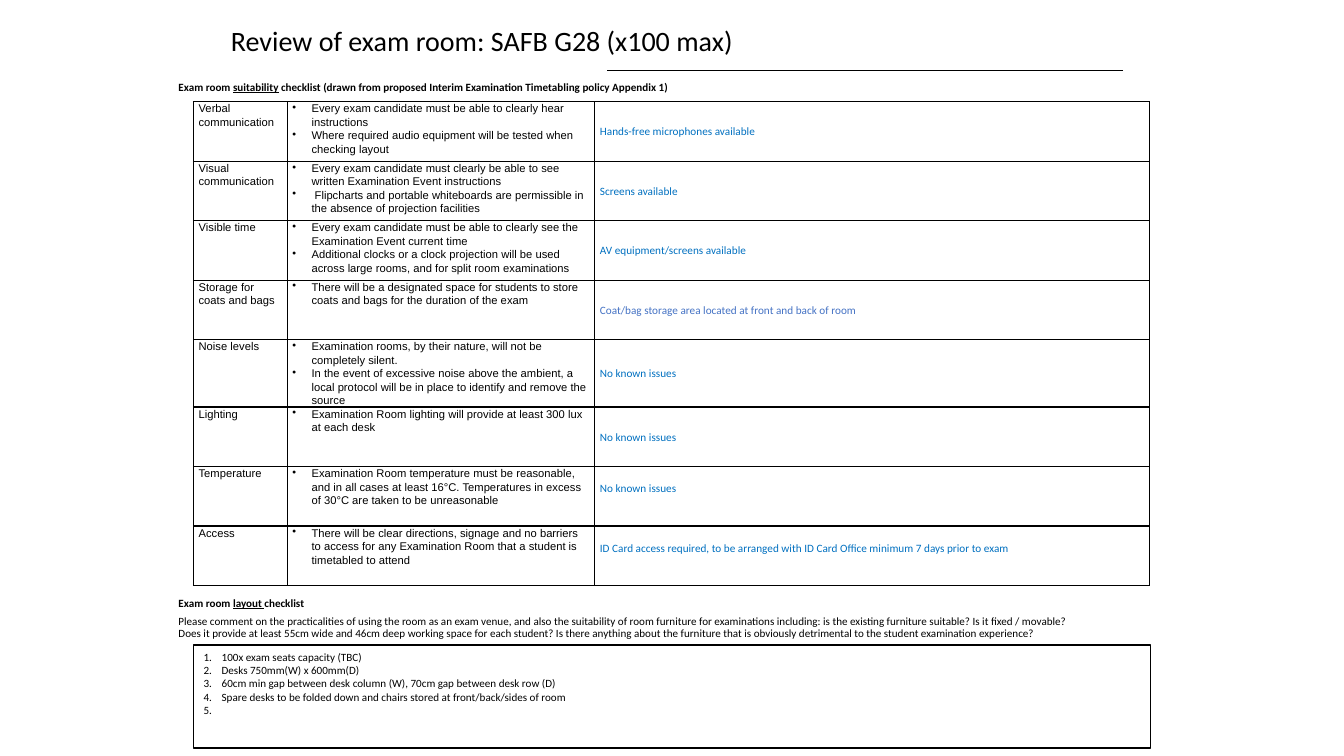
from lxml import etree
from pptx import Presentation
from pptx.dml.color import RGBColor
from pptx.enum.shapes import MSO_CONNECTOR, MSO_SHAPE
from pptx.enum.text import MSO_ANCHOR, MSO_AUTO_SIZE, PP_ALIGN
from pptx.oxml.ns import qn
from pptx.util import Inches, Pt

TOP, MIDDLE = MSO_ANCHOR.TOP, MSO_ANCHOR.MIDDLE
LEFT = PP_ALIGN.LEFT
NO_FIT = MSO_AUTO_SIZE.NONE
RECT, STRAIGHT = MSO_SHAPE.RECTANGLE, MSO_CONNECTOR.STRAIGHT

COLORS = {"black": "000000", "white": "FFFFFF", "blue": "0070C0", "accent": "4472C4"}

# Each row: topic, requirements, comment, comment colour, bottom margin of comment
CHECKLIST = [
    ("Verbal communication",
     ["Every exam candidate must be able to clearly hear instructions",
      "Where required audio equipment will be tested when checking layout"],
     "Hands-free microphones available", "blue", 0),
    ("Visual communication",
     ["Every exam candidate must clearly be able to see written Examination Event instructions",
      " Flipcharts and portable whiteboards are permissible in the absence of projection facilities"],
     "Screens available", "blue", 0),
    ("Visible time",
     ["Every exam candidate must be able to clearly see the Examination Event current time",
      "Additional clocks or a clock projection will be used across large rooms, "
      "and for split room examinations"],
     "AV equipment/screens available", "blue", 0),
    ("Storage for coats and bags",
     ["There will be a designated space for students to store coats and bags "
      "for the duration of the exam"],
     "Coat/bag storage area located at front and back of room", "accent", 0),
    ("Noise levels",
     ["Examination rooms, by their nature, will not be completely silent.",
      "In the event of excessive noise above the ambient, a local protocol will be in place "
      "to identify and remove the source"],
     "No known issues", "blue", 0),
    ("Lighting",
     ["Examination Room lighting will provide at least 300 lux at each desk"],
     "No known issues", "blue", 0),
    ("Temperature",
     ["Examination Room temperature must be reasonable, and in all cases at least 16°C. "
      "Temperatures in excess of 30°C are taken to be unreasonable"],
     "No known issues", "blue", 0.16),
    ("Access",
     ["There will be clear directions, signage and no barriers to access for any Examination Room "
      "that a student is timetabled to attend"],
     "ID Card access required, to be arranged with ID Card Office minimum 7 days prior to exam",
     "blue", 0.16),
]
LAYOUT_ITEMS = [
    "100x exam seats capacity (TBC)",
    "Desks 750mm(W) x 600mm(D)",
    "60cm min gap between desk column (W), 70cm gap between desk row (D)",
    "Spare desks to be folded down and chairs stored at front/back/sides of room",
]
PRACTICALITIES = (
    "Please comment on the practicalities of using the room as an exam venue, and also the "
    "suitability of room furniture for examinations including: is the existing furniture suitable? "
    "Is it fixed / movable? Does it provide at least 55cm wide and 46cm deep working space for each "
    "student? Is there anything about the furniture that is obviously detrimental to the student "
    "examination experience?")


class SlideBuilder:
    def __init__(self, s):
        self.s = s

    def color(self, name):
        return RGBColor.from_string(COLORS[name])

    def style(self, p, size, font="Calibri", color="black", bold=False):
        p.alignment = LEFT
        for r in p.runs:
            r.font.size, r.font.name, r.font.bold = Pt(size), font, bold
            r.font.color.rgb = self.color(color)

    def bullet(self, p, indent, tag, **attrs):
        pPr = p._p.get_or_add_pPr()
        pPr.set("marL", str(Inches(indent)))
        pPr.set("indent", str(Inches(-indent)))
        etree.SubElement(pPr, qn(tag), attrs)

    def place(self, sp, x, y, w, h):
        sp.left, sp.top, sp.width, sp.height = map(Inches, (x, y, w, h))
        tf = sp.text_frame
        tf.word_wrap, tf.auto_size, tf.vertical_anchor = True, NO_FIT, TOP
        return tf

    def title(self, text, box):
        tf = self.place(self.s.shapes.title, *box)
        tf.text = text
        self.style(tf.paragraphs[0], 20)

    def body(self, paragraphs, box):
        """Each paragraph: space before, bold, runs as (text, underlined)."""
        tf = self.place(self.s.placeholders[1], *box)
        for i, (space, bold, runs) in enumerate(paragraphs):
            p = tf.add_paragraph() if i else tf.paragraphs[0]
            self.bullet(p, 0, "a:buNone")
            p.line_spacing, p.space_before = 0.9, Pt(space)
            for text, underlined in runs:
                r = p.add_run()
                r.text, r.font.underline = text, underlined
            self.style(p, 7.9, bold=bold)

    def cell(self, cell, texts, font="Arial", color="black", bulleted=False,
             anchor=TOP, bottom=0):
        cell.margin_left = cell.margin_right = Inches(0.05)
        cell.margin_top, cell.margin_bottom = 0, Inches(bottom)
        cell.vertical_anchor = anchor
        cell.text_frame.text = "\n".join(texts)
        for p in cell.text_frame.paragraphs:
            if bulleted:
                self.bullet(p, 0.19, "a:buChar", char="•")
            p.line_spacing = 1.07
            self.style(p, 8, font, color)
        tcPr = cell._tc.get_or_add_tcPr()
        for side in ("a:lnL", "a:lnR", "a:lnT", "a:lnB"):
            ln = etree.SubElement(tcPr, qn(side), w=str(Pt(1)))
            fill = etree.SubElement(ln, qn("a:solidFill"))
            etree.SubElement(fill, qn("a:srgbClr"), val=COLORS["black"])
        cell.fill.background()

    def table(self, rows, x, y, widths, row_height):
        frame = self.s.shapes.add_table(
            len(rows), len(widths), Inches(x), Inches(y),
            Inches(sum(widths)), Inches(row_height * len(rows)))
        table = frame.table
        table.first_row = table.horz_banding = False
        for column, width in zip(table.columns, widths):
            column.width = Inches(width)
        for row, (topic, needs, comment, color, bottom) in zip(table.rows, rows):
            row.height = Inches(row_height)
            topic_cell, needs_cell, comment_cell = row.cells
            self.cell(topic_cell, [topic])
            self.cell(needs_cell, needs, bulleted=True)
            self.cell(comment_cell, [comment], "Calibri", color, anchor=MIDDLE, bottom=bottom)

    def numbered_box(self, items, box):
        sp = self.s.shapes.add_shape(RECT, *map(Inches, box))
        sp.shadow.inherit = False
        sp.fill.solid()
        sp.fill.fore_color.rgb = self.color("white")
        sp.line.color.rgb, sp.line.width = self.color("black"), Pt(1)
        tf = self.place(sp, *box)
        next_number = f"{len(items) + 1}."
        tf.text = "\n".join(items + [next_number])
        for p in tf.paragraphs:
            if p.text != next_number:
                self.bullet(p, 0.18, "a:buAutoNum", type="arabicPeriod")
            self.style(p, 7.9)

    def line(self, x1, y1, x2, y2):
        c = self.s.shapes.add_connector(STRAIGHT, *map(Inches, (x1, y1, x2, y2)))
        c.line.color.rgb, c.line.width = self.color("black"), Pt(1)
        etree.SubElement(c._element.spPr, qn("a:effectLst"))


def main():
    prs = Presentation()
    prs.slide_width, prs.slide_height = Inches(13.33), Inches(7.5)
    b = SlideBuilder(prs.slides.add_slide(prs.slide_layouts[1]))

    # Headings and guidance
    b.title("Review of exam room: SAFB G28 (x100 max)", (2.19, 0.18, 8.96, 0.77))
    b.body([
        (0, True, [("Exam room ", False), ("suitability", True),
                   (" checklist (drawn from proposed Interim Examination Timetabling policy "
                    "Appendix 1)", False)]),
        (360, True, [("Exam room ", False), ("layout ", True), ("checklist", False)]),
        (4.3, False, [(PRACTICALITIES, False)]),
    ], (1.67, 0.76, 9.06, 5.64))

    # Suitability table
    b.table(CHECKLIST, 1.92, 1.01, (0.93, 3.05, 5.5), 0.59)

    # Layout list and title rule
    b.numbered_box(LAYOUT_ITEMS, (1.92, 6.4, 9.49, 1.02))
    b.line(11.14, 0.7, 6.02, 0.7)

    prs.save("out.pptx")


if __name__ == "__main__":
    main()
